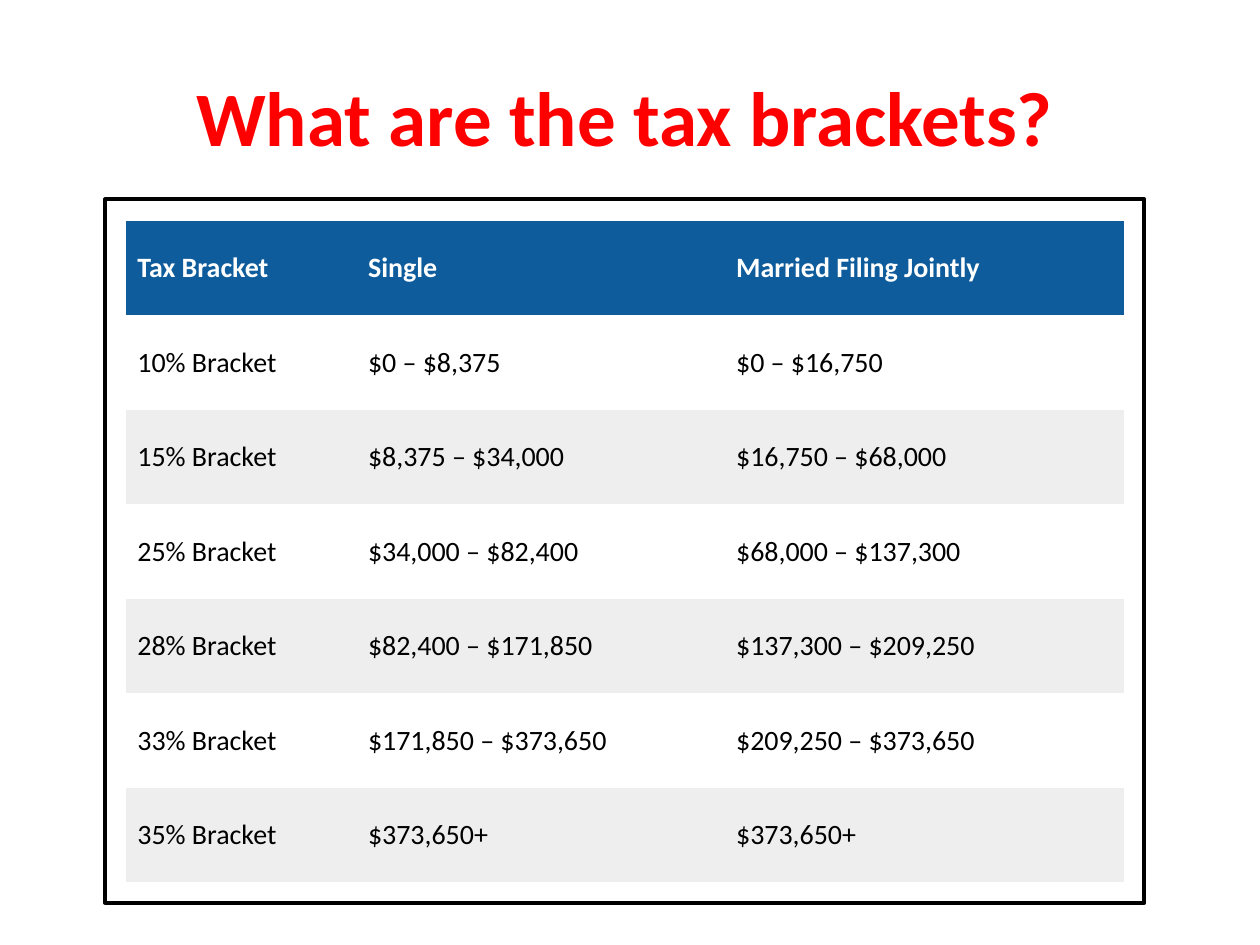
from pptx import Presentation
from pptx.dml.color import RGBColor
from pptx.enum.shapes import MSO_SHAPE
from pptx.enum.text import MSO_ANCHOR, PP_ALIGN
from pptx.util import Cm, Pt

NO_GRID_STYLE = "{2D5ABB26-0587-4C30-8999-92F81FD0307C}"
COLUMN_WIDTHS = [4.65, 7.42, 8.05]
ROW_HEIGHT = 1.905
BRACKETS = [
    ("Tax Bracket", "Single", "Married Filing Jointly"),
    ("10% Bracket", "$0 – $8,375", "$0 – $16,750"),
    ("15% Bracket", "$8,375 – $34,000", "$16,750 – $68,000"),
    ("25% Bracket", "$34,000 – $82,400", "$68,000 – $137,300"),
    ("28% Bracket", "$82,400 – $171,850", "$137,300 – $209,250"),
    ("33% Bracket", "$171,850 – $373,650", "$209,250 – $373,650"),
    ("35% Bracket", "$373,650+", "$373,650+"),
]


def rgb(hex_color):
    return RGBColor.from_string(hex_color)


def write(frame, text, size=16, color="000000", bold=False, align=PP_ALIGN.LEFT):
    paragraph = frame.paragraphs[0]
    paragraph.alignment = align
    run = paragraph.add_run()
    run.text = text
    run.font.name = "Calibri"
    run.font.size = Pt(size)
    run.font.bold = bold
    run.font.color.rgb = rgb(color)


prs = Presentation()
prs.slide_width, prs.slide_height = Cm(25.4), Cm(19.05)
slide = prs.slides.add_slide(prs.slide_layouts[5])

# Tax brackets
bracket_frame = slide.shapes.add_table(
    len(BRACKETS), len(COLUMN_WIDTHS), Cm(2.54), Cm(4.45),
    Cm(sum(COLUMN_WIDTHS)), Cm(ROW_HEIGHT * len(BRACKETS)))
brackets = bracket_frame.table
brackets._tbl.tblPr[0].text = NO_GRID_STYLE
for column, width in zip(brackets.columns, COLUMN_WIDTHS):
    column.width = Cm(width)

for r, entries in enumerate(BRACKETS):
    brackets.rows[r].height = Cm(ROW_HEIGHT)
    is_header = r == 0
    for c, entry in enumerate(entries):
        cell = brackets.cell(r, c)
        cell.vertical_anchor = MSO_ANCHOR.MIDDLE
        cell.margin_left = cell.margin_right = Cm(0.23)
        cell.margin_top = cell.margin_bottom = Cm(0.12)
        if r % 2:
            cell.fill.background()
        else:
            cell.fill.solid()
            cell.fill.fore_color.rgb = rgb("0E5C9C" if is_header else "EEEEEE")
        write(cell.text_frame, entry, bold=is_header,
              color="FFFFFF" if is_header else "000000")

# Title
title = slide.shapes.title
title.left, title.top, title.width, title.height = Cm(2.54), Cm(1.27), Cm(20.12), Cm(2.13)
title.text_frame.vertical_anchor = MSO_ANCHOR.TOP
write(title.text_frame, "What are the tax brackets?", size=44, color="FF0000",
      bold=True, align=PP_ALIGN.CENTER)

# Border around the table
border = slide.shapes.add_shape(
    MSO_SHAPE.RECTANGLE, Cm(2.12), Cm(4.02), Cm(20.95), Cm(14.18))
border.shadow.inherit = False
border.fill.background()
border.line.color.rgb = rgb("000000")
border.line.width = Pt(2.25)

prs.save("out.pptx")
